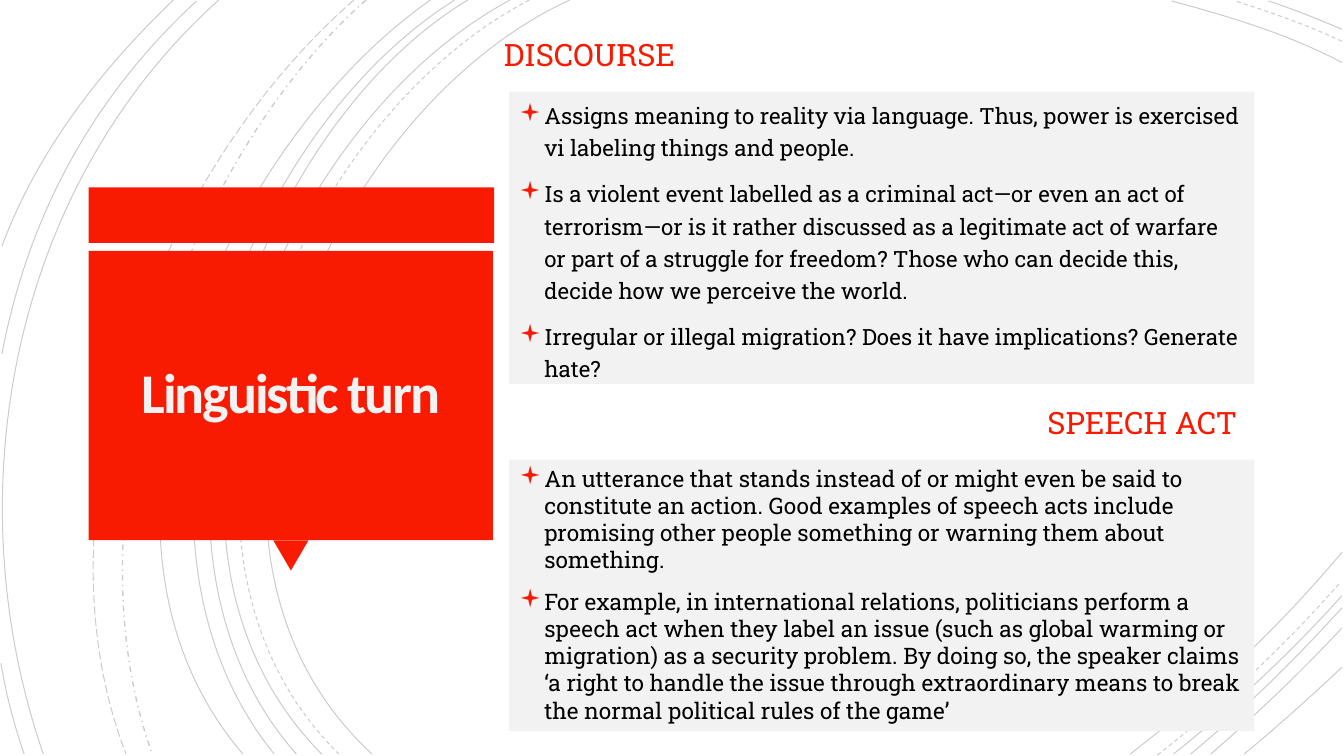
"""Build the Linguistic turn slide with its curved backdrop, red title block and two text panels."""
from lxml import etree
from pptx import Presentation
from pptx import util as u
from pptx.dml.color import RGBColor
from pptx.enum import dml, shapes, text
from pptx.oxml.ns import qn

RED = RGBColor(0xF8, 0x1B, 0x02)
PALE = RGBColor(0xF2, 0xF2, 0xF2)
BLACK = RGBColor(0, 0, 0)
SLAB = "Roboto Slab"

SOLID = dml.MSO_LINE.SOLID
DASH = dml.MSO_LINE.DASH
LONG_DASH = dml.MSO_LINE.LONG_DASH
DASH_DOT = dml.MSO_LINE.DASH_DOT

ARCS = [
    ((5.65, 0), (3.15, 1.15), (1.43, 5.4), (3.69, 7.48), SOLID),
    ((13.31, 0.62), (12.78, 0.34), (12.18, 0.16), (11.62, 0.01), SOLID),
    ((11.21, 7.48), (11.97, 6.9), (12.69, 6.22), (13.31, 5.48), SOLID),
    ((5.25, 0), (2.85, 1.25), (1.23, 5.37), (3.36, 7.48), DASH),
    ((13.31, 0.41), (12.97, 0.25), (12.6, 0.12), (12.25, 0.01), DASH),
    ((11.48, 7.49), (12.13, 6.98), (12.75, 6.4), (13.3, 5.77), DASH),
    ((5.06, 0), (2.7, 1.27), (1.1, 5.37), (3.19, 7.48), SOLID),
    ((13.31, 0.29), (13.07, 0.19), (12.83, 0.09), (12.58, 0.01), SOLID),
    ((11.64, 7.48), (12.23, 7.01), (12.8, 6.48), (13.31, 5.91), SOLID),
    ((4.64, 0), (2.44, 1.33), (1.1, 5.41), (2.94, 7.48), SOLID),
    ((11.81, 7.48), (12.34, 7.04), (12.84, 6.55), (13.31, 6.03), SOLID),
    ((4.51, 0), (2.31, 1.38), (0.97, 5.33), (2.72, 7.48), SOLID),
    ((12.01, 7.48), (12.46, 7.09), (12.9, 6.67), (13.31, 6.23), SOLID),
    ((4.27, 0), (2.17, 1.47), (0.53, 5.29), (2.41, 7.48), SOLID),
    ((12.34, 7.48), (12.67, 7.21), (12.99, 6.92), (13.31, 6.62), SOLID),
    ((3.63, 0), (1.76, 1.66), (0.65, 5.09), (1.51, 7.48), DASH_DOT),
    ((3.51, 0), (1.57, 1.69), (0.29, 4.99), (1.25, 7.48), LONG_DASH),
    ((2.17, 0), (0.11, 1.85), (-0.46, 4.9), (0.43, 7.48), SOLID),
    ((1.95, 0.01), (0.92, 0.96), (0.28, 2.14), (0.02, 3.51), SOLID),
    ((0.01, 6.58), (0.06, 6.89), (0.14, 7.19), (0.24, 7.48), SOLID),
    ((1.72, 0), (1, 0.69), (0.37, 1.5), (0.02, 2.44), SOLID),
]

RED_BLOCKS = [
    (shapes.MSO_SHAPE.RECTANGLE, (0.88, 1.86, 4.02, 0.55), 0),
    (shapes.MSO_SHAPE.ISOSCELES_TRIANGLE, (2.71, 5.36, 0.35, 0.3), 180),
    (shapes.MSO_SHAPE.RECTANGLE, (0.88, 2.49, 4.01, 2.87), 0),
]

TITLE = ("Linguistic turn", (0.97, 2.59, 3.83, 2.69))
HEADINGS = [
    ("DISCOURSE", (4.9, 0.16, 6.85, 0.75)),
    ("SPEECH ACT", (10.29, 3.81, 2.41, 0.75)),
]
PANELS = [
    ((5.05, 0.91, 7.39, 2.9), 16, 1.2, [
        "Assigns meaning to reality via language. Thus, power is exercised vi labeling things and people.",
        "Is a violent event labelled as a criminal act—or even an act of terrorism—or is it rather "
        "discussed as a legitimate act of warfare or part of a struggle for freedom? Those who can "
        "decide this, decide how we perceive the world.",
        "Irregular or illegal migration? Does it have implications? Generate hate?",
    ]),
    ((5.05, 4.56, 7.39, 2.69), 16.2, 1.0, [
        "An utterance that stands instead of or might even be said to constitute an action. Good "
        "examples of speech acts include promising other people something or warning them about something.",
        "For example, in international relations, politicians perform a speech act when they label an "
        "issue (such as global warming or migration) as a security problem. By doing so, the speaker "
        "claims ‘a right to handle the issue through extraordinary means to break the normal political "
        "rules of the game’",
    ]),
]


def inches(values):
    return [u.Inches(value) for value in values]


def add_arc(slide, *controls, dash):
    start, *others = [inches(point) for point in controls]
    builder = slide.shapes.build_freeform(*start)
    builder.add_line_segments(others, close=False)
    arc = builder.convert_to_shape()
    segments = list(arc._element.iter(qn("a:lnTo")))
    curve = etree.SubElement(segments[0].getparent(), qn("a:cubicBezTo"))
    for segment in segments:
        curve.append(segment[0])
        segment.getparent().remove(segment)
    arc.shadow.inherit = False
    arc.fill.background()
    arc.line.color.rgb = BLACK
    arc.line.width = u.Pt(1 if dash == DASH_DOT else 0.75)
    arc.line.dash_style = dash
    color = arc.line._ln.find(".//" + qn("a:srgbClr"))
    etree.SubElement(color, qn("a:alpha"), val="20000")


def add_block(slide, kind, box, color, rotation=0):
    block = slide.shapes.add_shape(kind, *inches(box))
    block.shadow.inherit = False
    block.fill.solid()
    block.fill.fore_color.rgb = color
    block.line.fill.background()
    block.rotation = rotation
    return block


def add_run(paragraph, words, size, color, font=SLAB):
    run = paragraph.add_run()
    run.text = words
    run.font.name = font
    run.font.size = u.Pt(size)
    run.font.color.rgb = color
    return run


def add_label(slide, box):
    frame = slide.shapes.add_textbox(*inches(box)).text_frame
    frame.word_wrap = True
    frame.vertical_anchor = text.MSO_ANCHOR.MIDDLE
    return frame


def add_bullet(paragraph):
    properties = paragraph._p.get_or_add_pPr()
    properties.set("marL", str(u.Inches(0.25)))
    properties.set("indent", str(u.Inches(-0.25)))
    color = etree.SubElement(properties, qn("a:buClr"))
    etree.SubElement(color, qn("a:srgbClr"), val=str(RED))
    etree.SubElement(properties, qn("a:buSzPct"), val="110000")
    etree.SubElement(properties, qn("a:buFont"), typeface="Wingdings")
    etree.SubElement(properties, qn("a:buChar"), char="▪")


def add_panel(slide, box, size, spacing, items):
    frame = add_block(slide, shapes.MSO_SHAPE.RECTANGLE, box, PALE).text_frame
    frame.word_wrap = True
    frame.vertical_anchor = text.MSO_ANCHOR.TOP
    for index, item in enumerate(items):
        paragraph = frame.add_paragraph() if index else frame.paragraphs[0]
        paragraph.alignment = text.PP_ALIGN.LEFT
        paragraph.line_spacing = spacing
        paragraph.space_before = u.Pt(10)
        add_bullet(paragraph)
        add_run(paragraph, item, size, BLACK)


def main():
    presentation = Presentation()
    presentation.slide_width, presentation.slide_height = inches((13.33, 7.5))
    slide = presentation.slides.add_slide(presentation.slide_layouts[6])

    for *controls, dash in ARCS:
        add_arc(slide, *controls, dash=dash)
    for kind, box, rotation in RED_BLOCKS:
        add_block(slide, kind, box, RED, rotation)

    words, box = TITLE
    title = add_label(slide, box)
    title.margin_top = title.margin_bottom = u.Inches(0.1)
    paragraph = title.paragraphs[0]
    paragraph.alignment = text.PP_ALIGN.CENTER
    paragraph.line_spacing = 0.85
    run = add_run(paragraph, words, 40, PALE, "Calibri")
    run.font.bold = True
    run._r.get_or_add_rPr().set("spc", "-150")

    for words, box in HEADINGS:
        add_run(add_label(slide, box).paragraphs[0], words, 22, RED)
    for panel in PANELS:
        add_panel(slide, *panel)

    presentation.save("out.pptx")


if __name__ == "__main__":
    main()
